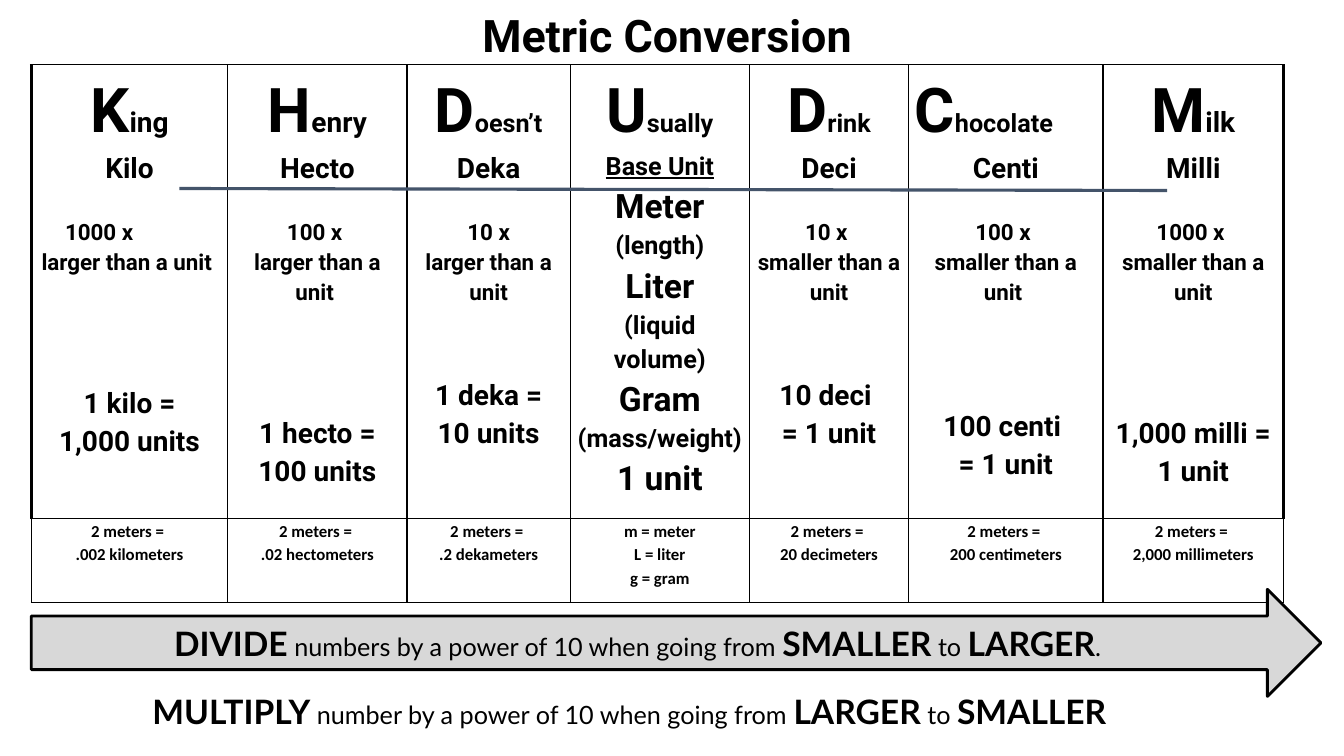
import pptx
import pptx.util
import pptx.dml.color
import pptx.enum.shapes
import pptx.enum.text
import pptx.oxml.ns
from lxml import etree

Cm, Pt = pptx.util.Cm, pptx.util.Pt
qn = pptx.oxml.ns.qn
ALIGN = pptx.enum.text.PP_ALIGN
ANCHOR = pptx.enum.text.MSO_ANCHOR

COLORS = {"ink": "000000", "arrow": "D8D8D8", "rule": "44546A"}

COL_WIDTHS = [4.95, 4.52, 4.11, 4.52, 4.01, 4.90, 4.55]
ROW_HEIGHTS = [11.43, 2.13]

# Initial, rest of word, its size, prefix, factor, relation, gap before equation, equation
PREFIXES = [
    ("K", "ing", 20, "Kilo", "1000 x", "larger than a unit ", 76, ["1 kilo =", "1,000 units"]),
    ("H", "enry", 20, "Hecto", "100 x ", "larger than a unit ", 76, ["1 hecto =", "100 units"]),
    ("D", "oesn’t", 18, "Deka", "10 x", "larger than a unit", 49, ["1 deka =", "10 units"]),
    ("D", "rink", 18, "Deci", "10 x ", "smaller than a unit", 49, ["10 deci ", "= 1 unit"]),
    ("C", "hocolate", 18, "Centi", "100 x ", "smaller than a unit ", 71, ["100 centi ", "= 1 unit"]),
    ("M", "ilk", 20, "Milli", "1000 x ", "smaller than a unit", 76, ["1,000 milli = 1 unit"]),
]
BASE_UNITS = [("Meter", "(length)"), ("Liter", "(liquid volume)"), ("Gram", "(mass/weight)")]
EXAMPLES = [".002 kilometers", ".02 hectometers", ".2 dekameters", "20 decimeters",
            "200 centimeters", "2,000 millimeters"]
BASE_COLUMN = 3


def rgb(name):
    return pptx.dml.color.RGBColor.from_string(COLORS[name])


def add_text(p, text, size=16, font="Roboto", bold=True, underline=False):
    r = p.add_run()
    r.text = text
    r.font.size, r.font.name = Pt(size), font
    r.font.bold, r.font.underline = bold, underline
    r.font.color.rgb = rgb("ink")


def new_paragraph(tf, align=ALIGN.CENTER, before=0):
    """Return the empty first paragraph, or a new one."""
    p = tf.paragraphs[0]
    if p.runs:
        p = tf.add_paragraph()
    p.alignment, p.line_spacing, p.space_before = align, 1.15, Pt(before)
    return p


def set_borders(cell, **widths):
    tcPr = cell._tc.get_or_add_tcPr()
    for side in ("L", "R", "T", "B"):
        ln = etree.SubElement(tcPr, qn("a:ln" + side), w=str(Pt(widths.get(side, 1))))
        fill = etree.SubElement(ln, qn("a:solidFill"))
        etree.SubElement(fill, qn("a:srgbClr"), val=COLORS["ink"])


def fill_prefix(tf, initial, rest, rest_size, prefix, factor, relation, gap, equation):
    p = new_paragraph(tf, ALIGN.LEFT if initial == "C" else ALIGN.CENTER)
    add_text(p, initial, size=44)
    add_text(p, rest, size=rest_size)
    add_text(new_paragraph(tf), prefix, size=20)
    if initial == "K":
        p = new_paragraph(tf, ALIGN.LEFT, before=22)
        p._p.get_or_add_pPr().set("marL", str(Cm(0.7)))
    else:
        p = new_paragraph(tf, before=22)
    add_text(p, factor)
    add_text(new_paragraph(tf), relation)
    for i, line in enumerate(equation):
        add_text(new_paragraph(tf, before=0 if i else gap), line, size=20)


def fill_base_unit(tf):
    p = new_paragraph(tf)
    add_text(p, "U", size=44)
    add_text(p, "sually", size=18)
    add_text(new_paragraph(tf), "Base Unit", size=18, underline=True)
    for unit, quantity in BASE_UNITS:
        add_text(new_paragraph(tf), unit, size=24)
        add_text(new_paragraph(tf), quantity, size=18)
    add_text(new_paragraph(tf), "1 unit", size=24)


def add_title(sl, x, y, w, h):
    sp = sl.shapes.title
    sp.left, sp.top, sp.width, sp.height = Cm(x), Cm(y), Cm(w), Cm(h)
    tf = sp.text_frame
    tf.auto_size = pptx.enum.text.MSO_AUTO_SIZE.NONE
    tf.vertical_anchor = ANCHOR.MIDDLE
    p = tf.paragraphs[0]
    p.alignment = ALIGN.CENTER
    add_text(p, "Metric Conversion", size=32)


def add_prefix_table(sl, x, y, w, h):
    last = len(COL_WIDTHS) - 1
    tbl = sl.shapes.add_table(2, last + 1, Cm(x), Cm(y), Cm(w), Cm(h)).table
    tbl.first_row = tbl.horz_banding = False
    for col, width in zip(tbl.columns, COL_WIDTHS):
        col.width = Cm(width)
    for row, height in zip(tbl.rows, ROW_HEIGHTS):
        row.height = Cm(height)
    for cell in tbl.iter_cells():
        cell.margin_left = cell.margin_right = Cm(0.15)
        cell.margin_top = cell.margin_bottom = 0

    # Heavier outer edges beside the mnemonic row
    for c in range(last + 1):
        set_borders(tbl.cell(0, c), L=1 if c else 2.25, R=2.25 if c == last else 1)
        set_borders(tbl.cell(1, c))
    for cell in tbl.iter_cells():
        cell.fill.background()

    # Prefix columns, skipping the base unit
    columns = [c for c in range(last + 1) if c != BASE_COLUMN]
    for c, prefix, example in zip(columns, PREFIXES, EXAMPLES):
        fill_prefix(tbl.cell(0, c).text_frame, *prefix)
        for line in ("2 meters = ", example):
            add_text(new_paragraph(tbl.cell(1, c).text_frame), line, size=12, font="Calibri")

    # Base unit column
    fill_base_unit(tbl.cell(0, BASE_COLUMN).text_frame)
    for line in ("m = meter", "L = liter", "g = gram"):
        add_text(new_paragraph(tbl.cell(1, BASE_COLUMN).text_frame), line, size=12, font="Calibri")

    # Rule under the prefixes
    rule = sl.shapes.add_connector(pptx.enum.shapes.MSO_CONNECTOR.STRAIGHT,
                                   Cm(x + 3.73), Cm(y + 3.12), Cm(x + 28.62), Cm(y + 3.17))
    rule.line.color.rgb = rgb("rule")
    rule.line.width = Pt(2.25)
    etree.SubElement(rule._element.spPr, qn("a:effectLst"))


def write_rule(tf, indent, words):
    """Alternate large bold words with smaller plain ones."""
    tf.word_wrap = True
    tf.margin_left = Cm(indent)
    p = tf.paragraphs[0]
    p.alignment = ALIGN.LEFT
    for i, text in enumerate(words):
        add_text(p, text, size=18 if i % 2 else 24, font="Lato", bold=i % 2 == 0)


def add_divide_arrow(sl, x, y, w, h):
    sp = sl.shapes.add_shape(pptx.enum.shapes.MSO_SHAPE.RIGHT_ARROW, Cm(x), Cm(y), Cm(w), Cm(h))
    sp.shadow.inherit = False
    sp.fill.solid()
    sp.fill.fore_color.rgb = rgb("arrow")
    sp.line.color.rgb = rgb("ink")
    sp.line.width = Pt(2)
    sp.text_frame.vertical_anchor = ANCHOR.MIDDLE
    write_rule(sp.text_frame, 3.6, ["DIVIDE", " numbers by a power of 10 when going from ",
                                    "SMALLER", " to ", "LARGER", "."])


def add_multiply_text(sl, x, y, w, h):
    tf = sl.shapes.add_textbox(Cm(x), Cm(y), Cm(w), Cm(h)).text_frame
    tf.margin_top = tf.margin_bottom = Cm(0.25)
    write_rule(tf, 2.95, ["MULTIPLY", " number by a power of 10 when going from ",
                          "LARGER", " to ", "SMALLER"])


def main():
    prs = pptx.Presentation()
    prs.slide_width, prs.slide_height = Cm(33.87), Cm(19.05)
    sl = prs.slides.add_slide(prs.slide_layouts[5])
    add_title(sl, 8.46, 0.05, 16.71, 1.63)
    add_prefix_table(sl, 0.79, 1.63, sum(COL_WIDTHS), sum(ROW_HEIGHTS))
    add_divide_arrow(sl, 0.79, 14.85, 32.5, 2.7)
    add_multiply_text(sl, 0.89, 17.15, 32.26, 1.47)
    prs.save("out.pptx")


if __name__ == "__main__":
    main()
